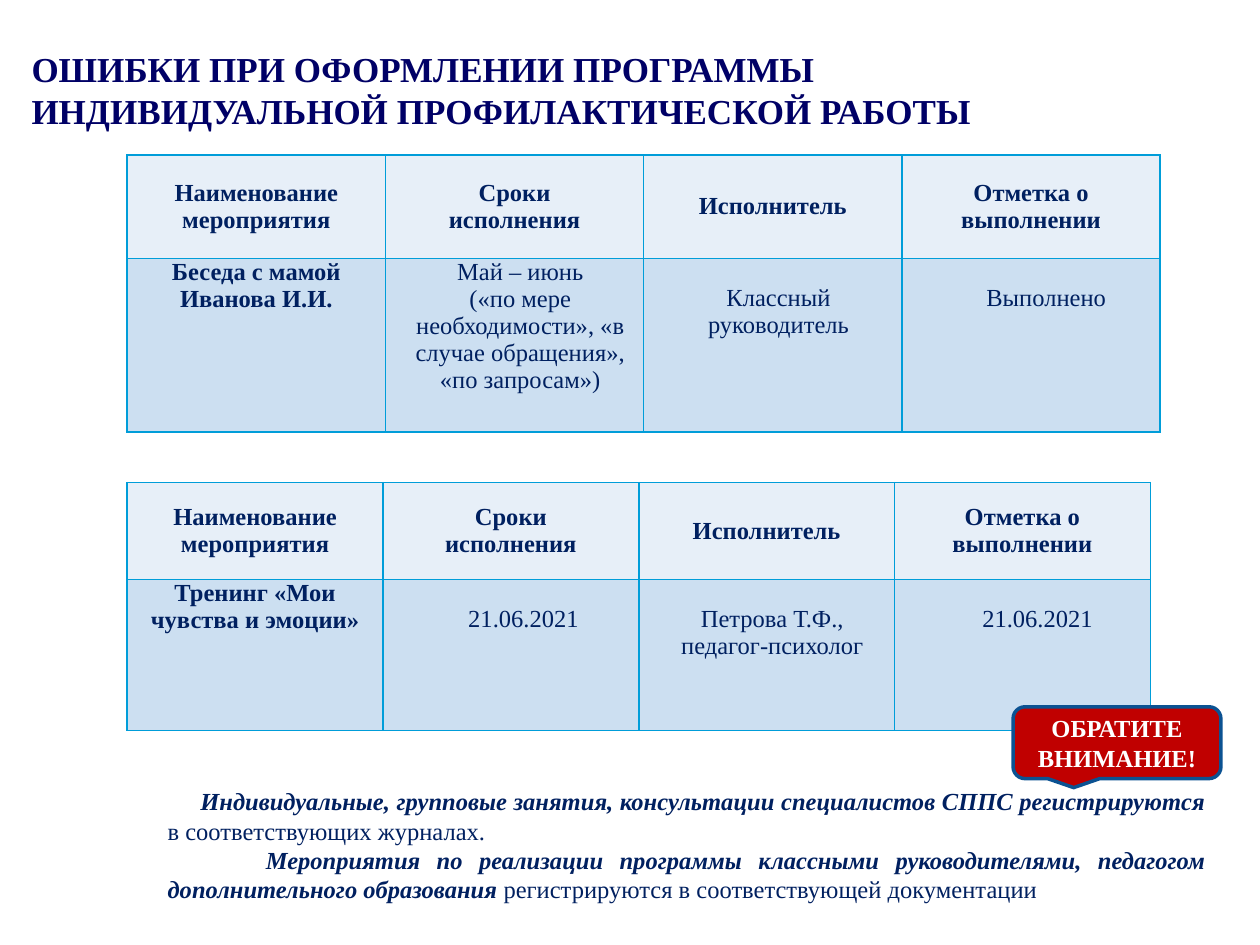
from lxml import etree
from pptx import Presentation
from pptx.dml.color import RGBColor
from pptx.enum.shapes import MSO_SHAPE
from pptx.enum.text import MSO_ANCHOR, MSO_AUTO_SIZE, PP_ALIGN
from pptx.oxml.ns import qn
from pptx.util import Inches, Pt

LEFT, CENTER, JUSTIFY = PP_ALIGN.LEFT, PP_ALIGN.CENTER, PP_ALIGN.JUSTIFY
TOP, MIDDLE = MSO_ANCHOR.TOP, MSO_ANCHOR.MIDDLE
CALLOUT = MSO_SHAPE.ROUNDED_RECTANGULAR_CALLOUT
NO_FIT = MSO_AUTO_SIZE.NONE
NAVY, EDGE = "002060", "009DD9"


def color(code):
    return RGBColor.from_string(code)


def write(frame, paras, align, tint=NAVY, **style):
    """Each paragraph is a list of (text, format values) runs."""
    frame.word_wrap = True
    for i, runs in enumerate(paras):
        para = frame.paragraphs[0] if i == 0 else frame.add_paragraph()
        para.alignment = align
        for text, extra in runs:
            if text == "\n":
                para.add_line_break()
                continue
            run = para.add_run()
            run.text = text
            look = {"name": "Times New Roman", "size": Pt(14), **style, **extra}
            for key, value in look.items():
                setattr(run.font, key, value)
            run.font.color.rgb = color(tint)


deck = Presentation()
deck.slide_width, deck.slide_height = Inches(10), Inches(7.5)
slide = deck.slides.add_slide(deck.slide_layouts[5])

# Title
title = slide.shapes.title
title.left, title.top = Inches(0.15), Inches(0.33)
title.width, title.height = Inches(8.22), Inches(0.77)
frame = title.text_frame
frame.auto_size = NO_FIT
frame.vertical_anchor = TOP
lines = ["ОШИБКИ ПРИ ОФОРМЛЕНИИ ПРОГРАММЫ",
         "ИНДИВИДУАЛЬНОЙ ПРОФИЛАКТИЧЕСКОЙ РАБОТЫ"]
write(frame, [[(line, {})] for line in lines], LEFT, "000066",
      size=Pt(20), bold=True)

# Tables: body cells hold (text, left indent, top gap)
heads = ["Наименование мероприятия", "Сроки\nисполнения",
         "Исполнитель", "Отметка о выполнении"]
GAP = 0.21
tables = [
    (1.23, 2.05, (0.82, 1.38), [
        ("Беседа с мамой Иванова И.И.", 0, 0),
        ("Май – июнь\n(«по мере необходимости», «в случае обращения», "
         "«по запросам»)", 0.09, 0),
        ("Классный руководитель", 0.09, GAP),
        ("Выполнено", 0.24, GAP)]),
    (3.83, 2.03, (0.77, 1.2), [
        ("Тренинг «Мои чувства и эмоции»", 0, 0),
        ("21.06.2021", 0.2, GAP),
        ("Петрова Т.Ф., педагог-психолог", 0.09, GAP),
        ("21.06.2021", 0.24, GAP)]),
]
for top, wide, highs, body in tables:
    grid = slide.shapes.add_table(2, 4, Inches(1.01), Inches(top),
                                  Inches(4 * wide), Inches(sum(highs))).table
    for col in grid.columns:
        col.width = Inches(wide)
    for row, high in zip(grid.rows, highs):
        row.height = Inches(high)
    rows = [[(head, 0, 0) for head in heads], body]
    for r, items in enumerate(rows):
        for c, (text, indent, gap) in enumerate(items):
            cell = grid.cell(r, c)
            cell.margin_left, cell.margin_right = Inches(0.05 + indent), Inches(0.05)
            cell.margin_top, cell.margin_bottom = Inches(gap), 0
            cell.vertical_anchor = TOP if r else MIDDLE
            # Borders go before the fill in the cell properties
            props = cell._tc.get_or_add_tcPr()
            for side in ("lnL", "lnR", "lnT", "lnB"):
                line = etree.SubElement(props, qn("a:" + side), w=str(Pt(1)))
                fill = etree.SubElement(line, qn("a:solidFill"))
                etree.SubElement(fill, qn("a:srgbClr"), val=EDGE)
            cell.fill.solid()
            cell.fill.fore_color.rgb = color("CCDFF1" if r else "E7EFF8")
            write(cell.text_frame, [[(part, {})] for part in text.split("\n")],
                  CENTER, bold=r == 0 or c == 0)

# Notes on where events are recorded
box = slide.shapes.add_textbox(Inches(0.85), Inches(6.19),
                               Inches(8.82), Inches(1.04))
frame = box.text_frame
frame.margin_left = Inches(0.48)
strong = {"bold": True, "italic": True}
write(frame, [
    [("Индивидуальные, групповые занятия, консультации специалистов СППС "
      "регистрируются ", strong),
     ("в соответствующих журналах.", {})],
    [("Мероприятия по реализации программы классными руководителями, "
      "педагогом дополнительного образования ", strong),
     ("регистрируются в соответствующей документации", {})],
], JUSTIFY)
for para, indent in zip(frame.paragraphs, (0.26, 0.78)):
    para._p.get_or_add_pPr().set("indent", str(Inches(indent)))

# Callout
note = slide.shapes.add_shape(CALLOUT, Inches(8.04), Inches(5.61),
                              Inches(1.65), Inches(0.57))
note.shadow.inherit = False
note.fill.solid()
note.fill.fore_color.rgb = color("C00000")
note.line.color.rgb = color("0B5292")
note.line.width = Pt(2)
note.text_frame.vertical_anchor = MIDDLE
write(note.text_frame, [[("ОБРАТИТЕ", {}), ("\n", {}), ("ВНИМАНИЕ!", {})]],
      CENTER, "FFFFFF", bold=True)

deck.save("out.pptx")
